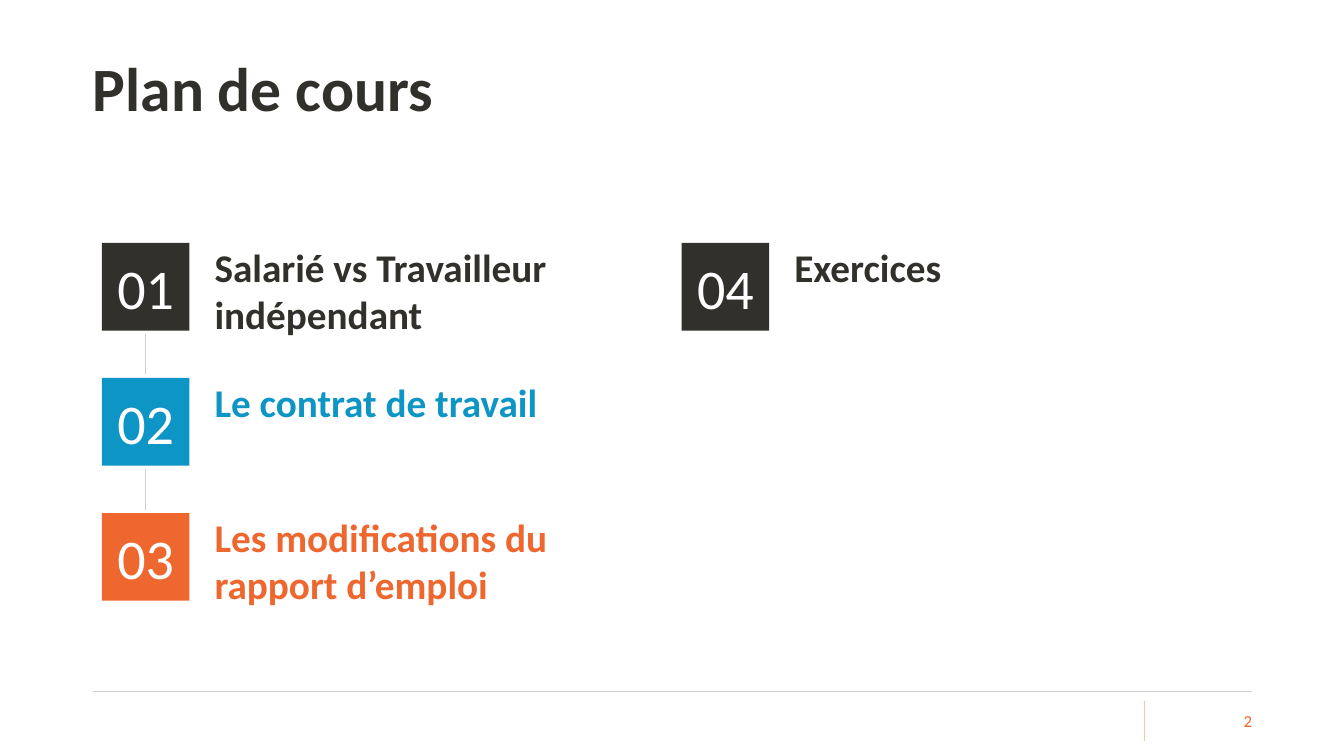
from pptx import Presentation
from pptx.dml.color import RGBColor
from pptx.enum.shapes import MSO_CONNECTOR, MSO_SHAPE
from pptx.enum.text import MSO_ANCHOR, MSO_AUTO_SIZE, PP_ALIGN
from pptx.oxml.ns import qn
from pptx.util import Inches, Pt
from lxml import etree

WIDTH, HEIGHT = 13.33, 7.5
MARGIN = 0.92
DARK, BLUE, ORANGE, WHITE = "31302B", "0D96C5", "EE672F", "FFFFFF"
FOOTER_GREY, LINK_GREY, PEACH = "CECDC7", "D0CECE", "F8C2AC"

AGENDA_LEFT, AGENDA_TOP = 1.01, 2.41
COLUMN_STEP, ROW_STEP = 5.75, 1.34
ROWS = 3
TILE = 0.87
LABEL_OFFSET, LABEL_WIDTH, LINE_HEIGHT = 1.02, 4.61, 0.47
LINK_GAP = 0.035

# Label, colour, number of text lines
TOPICS = [
    ("Salarié vs Travailleur indépendant", DARK, 2),
    ("Le contrat de travail", BLUE, 1),
    ("Les modifications du rapport d’emploi", ORANGE, 2),
    ("Exercices", DARK, 1),
]


def rgb(color):
    return RGBColor.from_string(color)


def write(shape, text, size, color, bold=False, align=PP_ALIGN.LEFT,
          anchor=MSO_ANCHOR.MIDDLE, insets=(0.1, 0.05, 0.1, 0.05),
          spacing=None, grow=False):
    """Fill a shape with one formatted paragraph; insets run left, top, right, bottom."""
    frame = shape.text_frame
    frame.word_wrap = True
    frame.auto_size = MSO_AUTO_SIZE.SHAPE_TO_FIT_TEXT if grow else MSO_AUTO_SIZE.NONE
    frame.vertical_anchor = anchor
    (frame.margin_left, frame.margin_top,
     frame.margin_right, frame.margin_bottom) = map(Inches, insets)
    paragraph = frame.paragraphs[0]
    paragraph.alignment = align
    paragraph.line_spacing = spacing
    run = paragraph.add_run()
    run.text = text
    run.font.name = "Calibri"
    run.font.size = Pt(size)
    run.font.bold = bold
    run.font.color.rgb = rgb(color)


def add_textbox(slide, left, top, width, height):
    return slide.shapes.add_textbox(*map(Inches, (left, top, width, height)))


def add_line(slide, start, end, color):
    line = slide.shapes.add_connector(
        MSO_CONNECTOR.STRAIGHT, *map(Inches, (*start, *end)))
    line.line.color.rgb = rgb(color)
    line.line.width = Pt(0.5)
    etree.SubElement(line._element.spPr, qn("a:effectLst"))


def add_title(slide, left, top, width, height):
    title = slide.shapes.title
    title.left, title.top, title.width, title.height = map(
        Inches, (left, top, width, height))
    write(title, "Plan de cours", 44, DARK, bold=True,
          insets=(0, 0.05, 0.1, 0.05), spacing=0.9)


def add_topic(slide, left, top, number, label, color, lines):
    textbox = add_textbox(slide, left + LABEL_OFFSET, top,
                          LABEL_WIDTH, lines * LINE_HEIGHT)
    write(textbox, label, 28, color, bold=True, anchor=MSO_ANCHOR.TOP,
          insets=(0.1, 0, 0.1, 0), grow=True)
    tile = slide.shapes.add_shape(
        MSO_SHAPE.RECTANGLE, *map(Inches, (left, top, TILE, TILE)))
    tile.shadow.inherit = False
    tile.fill.solid()
    tile.fill.fore_color.rgb = rgb(color)
    tile.line.fill.background()
    write(tile, f"{number:02d}", 40, WHITE, align=PP_ALIGN.CENTER)


def add_agenda(slide, left, top):
    """Place the topics column by column, linking each tile to the one above."""
    for index, topic in enumerate(TOPICS):
        column, row = divmod(index, ROWS)
        tile_left = left + column * COLUMN_STEP
        tile_top = top + row * ROW_STEP
        add_topic(slide, tile_left, tile_top, index + 1, *topic)
        if row:
            center = tile_left + TILE / 2
            add_line(slide, (center, tile_top - ROW_STEP + TILE + LINK_GAP),
                     (center, tile_top - LINK_GAP), LINK_GREY)


def add_footer(slide, left, top, width):
    right = left + width
    add_line(slide, (left, top), (right, top), FOOTER_GREY)
    number_top, number_width, number_height = top + 0.09, 0.95, 0.4
    divider = right - number_width - 0.12
    add_line(slide, (divider, number_top),
             (divider, number_top + number_height), PEACH)
    number = add_textbox(slide, right - number_width, number_top,
                         number_width, number_height)
    write(number, "2", 12, ORANGE, align=PP_ALIGN.RIGHT,
          insets=(0, 0.05, 0, 0.05))


def main():
    presentation = Presentation()
    presentation.slide_width = Inches(WIDTH)
    presentation.slide_height = Inches(HEIGHT)
    slide = presentation.slides.add_slide(presentation.slide_layouts[5])
    slide.background.fill.solid()
    slide.background.fill.fore_color.rgb = rgb(WHITE)
    add_footer(slide, MARGIN, 6.86, 11.5)
    add_agenda(slide, AGENDA_LEFT, AGENDA_TOP)
    add_title(slide, MARGIN, 0.18, 10.47, 1.45)
    presentation.save("out.pptx")


if __name__ == "__main__":
    main()
